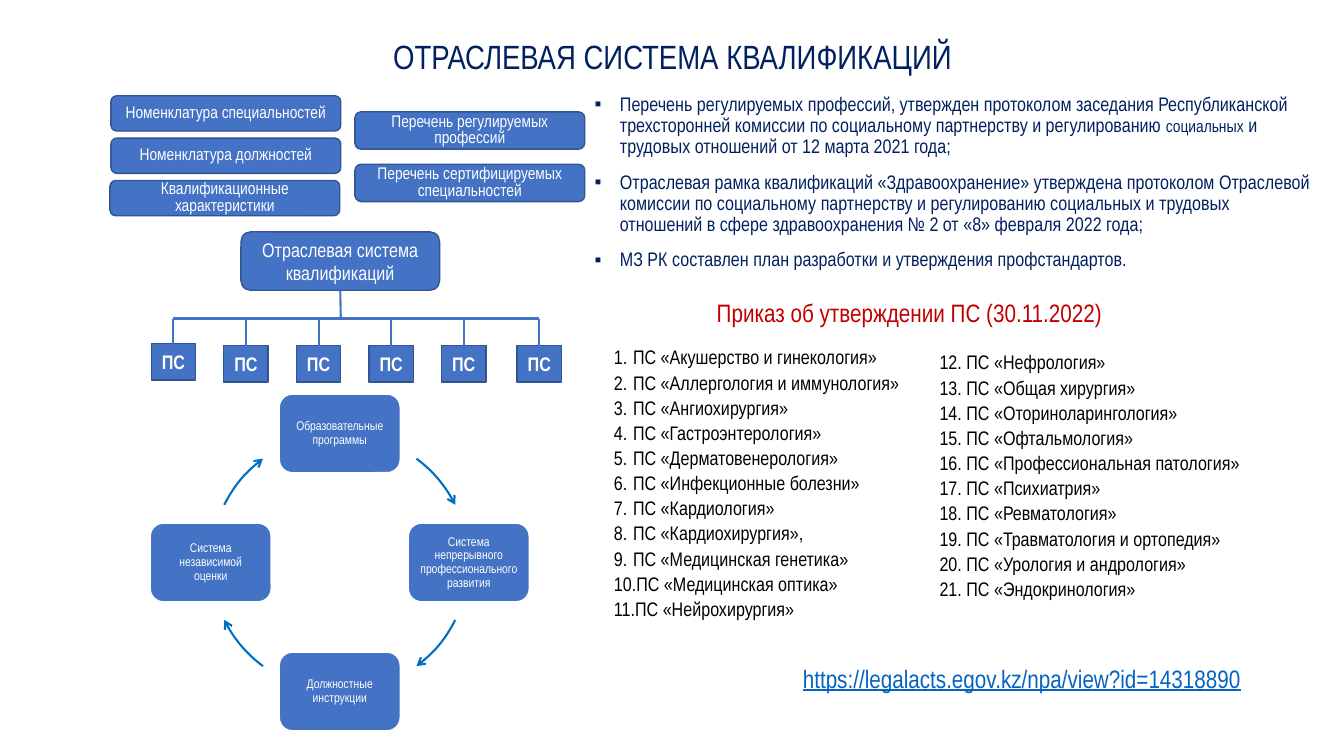
from lxml.etree import SubElement
from pptx import Presentation
from pptx.dml.color import RGBColor
from pptx.enum.shapes import MSO_CONNECTOR as Link, MSO_SHAPE as Form
from pptx.enum.text import MSO_ANCHOR as Anchor, PP_ALIGN as Align
from pptx.oxml.ns import qn
from pptx.util import Inches, Pt

COLORS = {
    "navy": "002060", "blue": "4472C4", "edge": "325491", "arrow": "0070C0",
    "white": "FFFFFF", "black": "000000", "red": "C00000", "link": "0563C1",
}
SQUARE = "▪"
CENTER = Align.CENTER

REGULATIONS = [
    ["Перечень регулируемых профессий, утвержден протоколом заседания Республиканской "
     "трехсторонней комиссии по социальному партнерству и регулированию ",
     ("социальных", 12), " и трудовых отношений от 12 марта 2021 года;"],
    "Отраслевая рамка квалификаций «Здравоохранение» утверждена протоколом Отраслевой "
    "комиссии по социальному партнерству и регулированию социальных и трудовых отношений "
    "в сфере здравоохранения № 2 от «8» февраля 2022 года;",
    "МЗ РК составлен план разработки и утверждения профстандартов.",
]
SOURCES = [
    ("Номенклатура специальностей", 1.1, 0.95, 0.35),
    ("Номенклатура должностей", 1.1, 1.37, 0.35),
    ("Квалификационные характеристики", 1.09, 1.79, 0.35),
    ("Перечень регулируемых профессий", 3.52, 1.11, 0.37),
    ("Перечень сертифицируемых специальностей", 3.52, 1.63, 0.37),
]
STANDARD_CENTERS = [1.72, 2.44, 3.16, 3.88, 4.6, 5.35]
CYCLE = [
    ("Образовательные программы", 0, -1),
    ("Система непрерывного профессионального развития", 1, 0),
    ("Должностные инструкции", 0, 1),
    ("Система независимой оценки", -1, 0),
]
FIRST_STANDARDS = [
    "ПС «Акушерство и гинекология»", "ПС «Аллергология и иммунология»",
    "ПС «Ангиохирургия»", "ПС «Гастроэнтерология»", "ПС «Дерматовенерология»",
    "ПС «Инфекционные болезни»", "ПС «Кардиология»", "ПС «Кардиохирургия»,",
    "ПС «Медицинская генетика»", "ПС «Медицинская оптика»", "ПС «Нейрохирургия»",
]
LAST_STANDARDS = [
    "12. ПС «Нефрология»", "13. ПС «Общая хирургия»", "14. ПС «Оториноларингология»",
    "15. ПС «Офтальмология»", "16. ПС «Профессиональная патология»",
    "17. ПС «Психиатрия»", "18. ПС «Ревматология»",
    "19. ПС «Травматология и ортопедия»", "20. ПС «Урология и андрология»",
    "21. ПС «Эндокринология»",
]


def color(name):
    return RGBColor.from_string(COLORS[name])


class SlideBuilder:
    font_name = "Arial Narrow"

    def __init__(self, page):
        self.page = page

    def set_text(self, frame, paragraphs, size, ink, align=Align.LEFT, spacing=1.0, before=0,
                 bold=False, underline=False, bullet=None, indent=0):
        """Fill a text frame; a paragraph is a string or a list of strings and (text, size)."""
        frame.word_wrap = True
        for index, content in enumerate(paragraphs):
            para = frame.paragraphs[0] if index == 0 else frame.add_paragraph()
            if bullet:
                self.add_bullet(para, bullet, indent)
            para.alignment = align
            para.line_spacing = spacing
            para.space_before = Pt(before)
            font = para.font
            font.name, font.size, font.bold = self.font_name, Pt(size), bold
            font.underline = underline
            font.color.rgb = color(ink)
            for part in [content] if isinstance(content, str) else content:
                span = para.add_run()
                if isinstance(part, str):
                    span.text = part
                else:
                    span.text = part[0]
                    span.font.size = Pt(part[1])

    def add_bullet(self, para, bullet, indent):
        """Add a hanging square bullet or automatic number."""
        props = para._p.get_or_add_pPr()
        props.set("marL", str(Inches(indent)))
        props.set("indent", str(-Inches(indent)))
        if bullet == SQUARE:
            SubElement(props, qn("a:buFont"), typeface="Arial")
            SubElement(props, qn("a:buChar"), char=bullet)
        else:
            SubElement(props, qn("a:buFont"), typeface=self.font_name)
            SubElement(props, qn("a:buAutoNum"), type=bullet)

    def text(self, left, top, width, height, paragraphs, size, ink,
             anchor=Anchor.TOP, **style):
        box = self.page.shapes.add_textbox(*map(Inches, (left, top, width, height)))
        box.text_frame.vertical_anchor = anchor
        self.set_text(box.text_frame, paragraphs, size, ink, **style)

    def box(self, form, left, top, width, height, label, size, edge="edge",
            inset=None, **style):
        box = self.page.shapes.add_shape(form, *map(Inches, (left, top, width, height)))
        box.shadow.inherit = False
        box.fill.solid()
        box.fill.fore_color.rgb = color("blue")
        box.line.color.rgb = color(edge)
        box.line.width = Pt(1)
        frame = box.text_frame
        frame.vertical_anchor = Anchor.MIDDLE
        if inset is not None:
            frame.margin_left = frame.margin_right = Inches(inset)
            frame.margin_top = frame.margin_bottom = Inches(inset)
        self.set_text(frame, [label], size, "white", align=CENTER, **style)
        return box

    def line(self, x1, y1, x2, y2):
        line = self.page.shapes.add_connector(Link.STRAIGHT, *map(Inches, (x1, y1, x2, y2)))
        line.line.color.rgb = color("blue")
        line.line.width = Pt(1.5)
        SubElement(line._element.spPr, qn("a:effectLst"))
        return line

    def arc_arrow(self, center_x, center_y, radius, start, end):
        """Draw a clockwise arc between two angles in degrees, with an arrowhead at its end."""
        arc = self.page.shapes.add_shape(
            Form.ARC, Inches(center_x - radius), Inches(center_y - radius),
            Inches(2 * radius), Inches(2 * radius))
        # Angles are stored in 60000ths of a degree, adjustments in 100000ths.
        arc.adjustments[0] = start * 0.6
        arc.adjustments[1] = end * 0.6
        arc.shadow.inherit = False
        arc.fill.background()
        arc.line.color.rgb = color("arrow")
        arc.line.width = Pt(1.5)
        SubElement(arc._element.spPr.find(qn("a:ln")), qn("a:tailEnd"), type="arrow")


def draw_hierarchy(builder):
    for label, left, top, height in SOURCES:
        builder.box(Form.ROUNDED_RECTANGLE, left, top, 2.28, height, label, 12,
                    spacing=Pt(12))
    system = builder.box(Form.ROUNDED_RECTANGLE, 2.39, 2.3, 1.97, 0.58,
                         "Отраслевая система квалификаций", 14)
    bar_y = 3.16
    builder.line(STANDARD_CENTERS[0], bar_y, STANDARD_CENTERS[-1], bar_y)
    builder.line(3.38, 2.88, 3.38, bar_y).begin_connect(system, 2)
    for index, center in enumerate(STANDARD_CENTERS):
        top = 3.43 if index else 3.41
        standard = builder.box(Form.RECTANGLE, center - 0.22, top, 0.44, 0.36, "ПС", 14,
                               bold=True)
        builder.line(center, bar_y, center, top).end_connect(standard, 0)


def draw_cycle(builder):
    center_x, center_y, radius = 3.37, 5.58, 1.28
    width, height = 1.2, 0.78
    for label, across, down in CYCLE:
        builder.box(Form.ROUNDED_RECTANGLE, center_x + across * radius - width / 2,
                    center_y + down * radius - height / 2, width, height, label, 9,
                    edge="white", inset=0.08, spacing=0.9)
    for middle in (40, 140, 220, 320):
        builder.arc_arrow(center_x, center_y, radius, middle - 13.5, middle + 13.5)


def main():
    deck = Presentation()
    deck.slide_width, deck.slide_height = Inches(13.33), Inches(7.5)
    builder = SlideBuilder(deck.slides.add_slide(deck.slide_layouts[6]))

    builder.text(0.92, 0.24, 11.5, 0.69, ["ОТРАСЛЕВАЯ СИСТЕМА КВАЛИФИКАЦИЙ"], 24, "navy",
                 anchor=Anchor.MIDDLE, align=CENTER, spacing=0.9)
    builder.text(5.8, 0.89, 7.31, 1.84, REGULATIONS, 14, "navy",
                 spacing=0.9, before=10, bullet=SQUARE, indent=0.25)
    draw_hierarchy(builder)
    draw_cycle(builder)
    builder.text(7.01, 2.9, 4.89, 0.4, ["Приказ об утверждении ПС (30.11.2022)"], 18, "red")
    builder.text(5.99, 3.36, 3.08, 2.51, FIRST_STANDARDS, 14, "black",
                 spacing=1.07, bullet="arabicPeriod", indent=0.19)
    builder.text(9.22, 3.41, 3.75, 2.29, LAST_STANDARDS, 14, "black", spacing=1.07)
    builder.text(6.8, 6.51, 6.67, 0.4, ["https://legalacts.egov.kz/npa/view?id=14318890"],
                 18, "link", align=CENTER, spacing=1.07, underline=True)
    deck.save("out.pptx")


if __name__ == "__main__":
    main()
